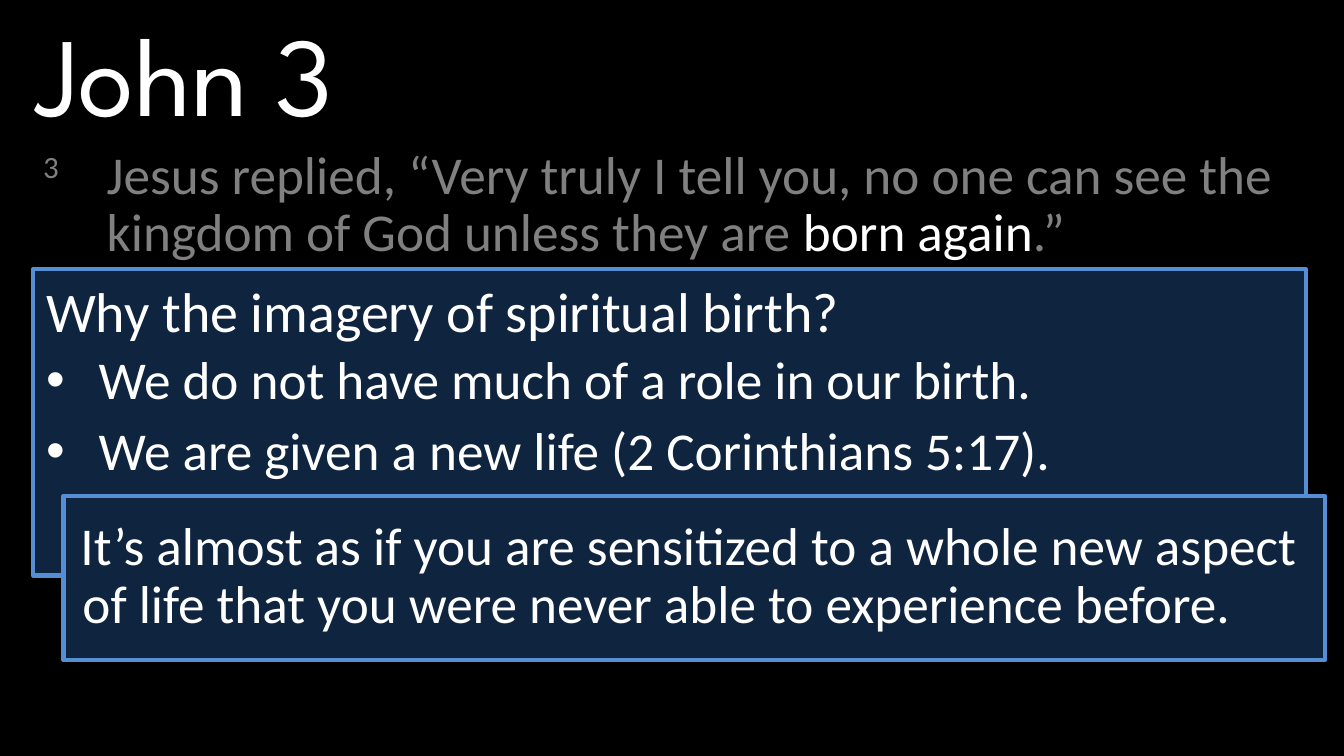
from lxml import etree
from pptx import Presentation, util as u
from pptx.dml.color import RGBColor
from pptx.enum import shapes, text
from pptx.oxml.ns import qn

WHITE, GREY, NAVY, BLUE = "FFFFFF", "808080", "0F243E", "558ED5"
BODY = 38


def rgb(code):
    return RGBColor.from_string(code)


def add_text(s, box):
    tf = s.shapes.add_textbox(*map(u.Inches, box)).text_frame
    tf.word_wrap = True
    tf.auto_size = text.MSO_AUTO_SIZE.SHAPE_TO_FIT_TEXT
    return tf


def add_run(p, words, size=BODY, color=WHITE, font="Calibri"):
    r = p.add_run()
    r.text = words
    r.font.size, r.font.name = u.Pt(size), font
    r.font.color.rgb = rgb(color)
    return r


def format_paragraph(p, hang=0, after=0, bullet=False):
    """Set tight lines, a hanging indent in inches and an optional bullet."""
    p.line_spacing = 0.9
    p.space_after = u.Pt(after)
    pPr = p._p.get_or_add_pPr()
    pPr.set("marL", str(u.Inches(hang)))
    pPr.set("indent", str(-u.Inches(hang)))
    if bullet:
        etree.SubElement(pPr, qn("a:buFont")).set("typeface", "Arial")
        etree.SubElement(pPr, qn("a:buChar")).set("char", "•")


def add_panel(s, box):
    sp = s.shapes.add_shape(shapes.MSO_SHAPE.RECTANGLE, *map(u.Inches, box))
    sp.shadow.inherit = False
    sp.fill.solid()
    sp.fill.fore_color.rgb = rgb(NAVY)
    sp.line.color.rgb = rgb(BLUE)
    sp.line.width = u.Pt(3)


def add_title(s, box, words):
    add_run(add_text(s, box).paragraphs[0], words, 80, font="League Spartan")


def add_verse(s, box, number, parts):
    p = add_text(s, box).paragraphs[0]
    format_paragraph(p, 0.63)
    r = add_run(p, number + "\t", color=GREY)
    r._r.get_or_add_rPr().set("baseline", "30000")
    for words, color in parts:
        add_run(p, words, color=color)


def add_question(s, box, question, answers):
    x, y, w, h = box
    add_panel(s, box)
    tf = add_text(s, (x + 0.03, y + 0.1, w - 0.11, h - 0.96))
    p = tf.paragraphs[0]
    format_paragraph(p, after=6)
    add_run(p, question, 40)
    for answer in answers:
        p = tf.add_paragraph()
        format_paragraph(p, 0.52, 10, bullet=True)
        add_run(p, answer)


def add_comment(s, box, words):
    x, y, w, h = box
    add_panel(s, box)
    p = add_text(s, (x + 0.07, y + 0.19, w - 0.11, h - 0.38)).paragraphs[0]
    format_paragraph(p, 0.02)
    add_run(p, words)


def main():
    prs = Presentation()
    prs.slide_width, prs.slide_height = u.Inches(13.33), u.Inches(7.5)
    s = prs.slides.add_slide(prs.slide_layouts[6])
    s.background.fill.solid()
    s.background.fill.fore_color.rgb = rgb("000000")

    add_verse(s, (0.33, 1.42, 12.62, 1.25), "3", [
        ("Jesus replied, “Very truly I tell you, no one can see the "
         "kingdom of God unless they are ", GREY),
        ("born again", WHITE),
        (".”", GREY),
    ])
    add_title(s, (0.25, 0, 12, 1.45), "John 3")
    add_question(s, (0.33, 2.67, 12.62, 3.04),
                 "Why the imagery of spiritual birth?",
                 ["We do not have much of a role in our birth.",
                  "We are given a new life (2 Corinthians 5:17)."])
    add_comment(s, (0.63, 4.92, 12.51, 1.63),
                "It’s almost as if you are sensitized to a whole new aspect "
                "of life that you were never able to experience before.")
    prs.save("out.pptx")


if __name__ == "__main__":
    main()
